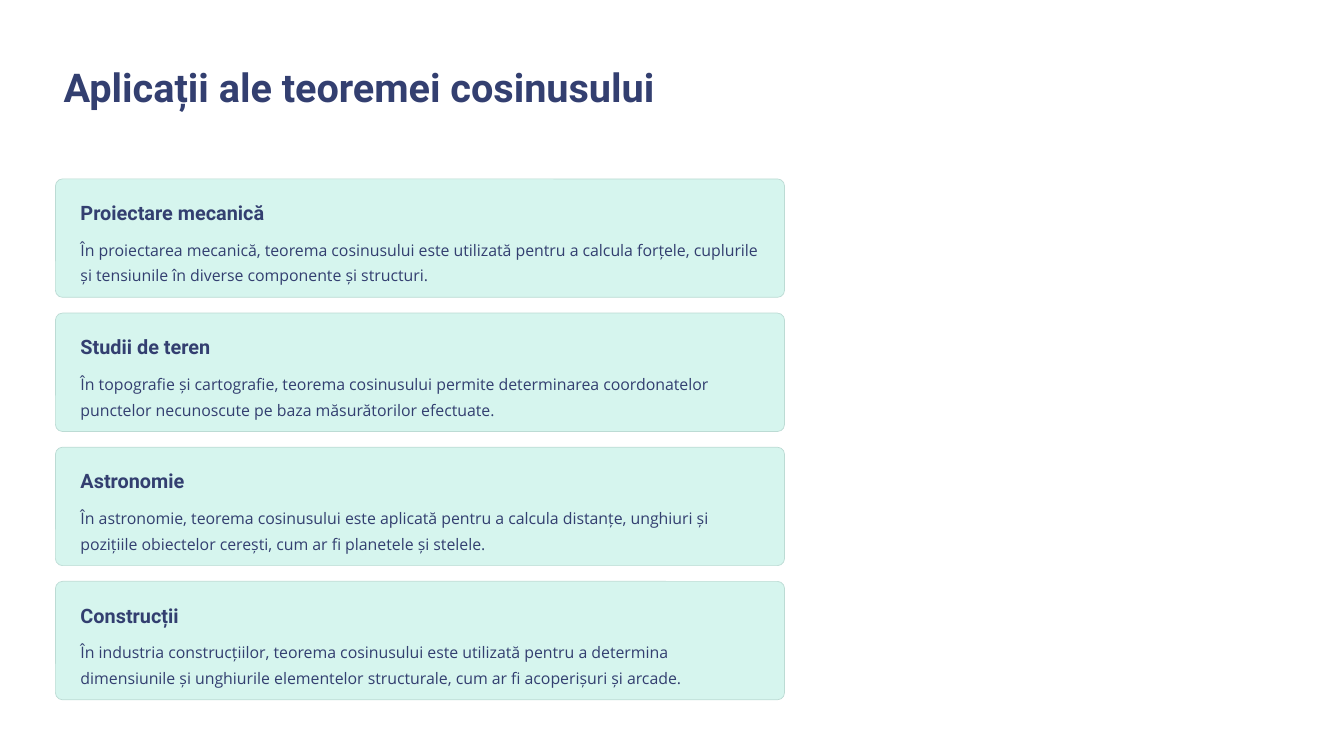
from dataclasses import dataclass

from pptx import Presentation
from pptx.dml.color import RGBColor
from pptx.enum.shapes import MSO_SHAPE
from pptx.util import Inches, Pt


@dataclass(frozen=True)
class Theme:
    background: RGBColor = RGBColor(0xFF, 0xFF, 0xFF)
    ink: RGBColor = RGBColor(0x33, 0x3F, 0x70)
    card: RGBColor = RGBColor(0xD6, 0xF5, 0xEE)
    border: RGBColor = RGBColor(0xBC, 0xDB, 0xD4)
    heading_font: str = "Roboto"
    body_font: str = "Open Sans"
    title_size: float = 34
    heading_size: float = 17
    body_size: float = 13.6


THEME = Theme()

LEFT, WIDTH = 0.66, 8.68
CARD_TOP, CARD_HEIGHT, CARD_PITCH = 2.13, 1.41, 1.597
PADDING = 0.2

APPLICATIONS = [
    ("Proiectare mecanică",
     "În proiectarea mecanică, teorema cosinusului este utilizată pentru a calcula "
     "forțele, cuplurile și tensiunile în diverse componente și structuri."),
    ("Studii de teren",
     "În topografie și cartografie, teorema cosinusului permite determinarea "
     "coordonatelor punctelor necunoscute pe baza măsurătorilor efectuate."),
    ("Astronomie",
     "În astronomie, teorema cosinusului este aplicată pentru a calcula distanțe, "
     "unghiuri și pozițiile obiectelor cerești, cum ar fi planetele și stelele."),
    ("Construcții",
     "În industria construcțiilor, teorema cosinusului este utilizată pentru a "
     "determina dimensiunile și unghiurile elementelor structurale, cum ar fi "
     "acoperișuri și arcade."),
]


def add_text(slide, text, left, top, width, height, *, size, line_spacing,
             font=THEME.heading_font, bold=True, wrap=True):
    box = slide.shapes.add_textbox(Inches(left), Inches(top),
                                   Inches(width), Inches(height))
    box.text_frame.word_wrap = wrap
    paragraph = box.text_frame.paragraphs[0]
    paragraph.line_spacing = Pt(line_spacing)
    run = paragraph.add_run()
    run.text = text
    run.font.name = font
    run.font.size = Pt(size)
    run.font.bold = bold
    run.font.color.rgb = THEME.ink


def add_card(slide, top, heading, description):
    card = slide.shapes.add_shape(MSO_SHAPE.ROUNDED_RECTANGLE, Inches(LEFT),
                                  Inches(top), Inches(WIDTH), Inches(CARD_HEIGHT))
    card.adjustments[0] = 0.06
    card.shadow.inherit = False
    card.fill.solid()
    card.fill.fore_color.rgb = THEME.card
    card.line.color.rgb = THEME.border
    card.line.width = Pt(0.6)

    text_left, text_width = LEFT + PADDING, WIDTH - 2 * PADDING
    add_text(slide, heading, text_left, top + PADDING, 3.1, 0.3,
             size=THEME.heading_size, line_spacing=21.3, wrap=False)
    add_text(slide, description, text_left, top + 0.61, text_width, 0.6,
             size=THEME.body_size, line_spacing=21.8,
             font=THEME.body_font, bold=False)


def main():
    presentation = Presentation()
    presentation.slide_width = Inches(16)
    presentation.slide_height = Inches(9)
    slide = presentation.slides.add_slide(presentation.slide_layouts[6])
    slide.background.fill.solid()
    slide.background.fill.fore_color.rgb = THEME.background

    add_text(slide, "Aplicații ale teoremei cosinusului", LEFT, 0.67, WIDTH, 1.18,
             size=THEME.title_size, line_spacing=42.5)
    for index, (heading, description) in enumerate(APPLICATIONS):
        add_card(slide, CARD_TOP + index * CARD_PITCH, heading, description)

    presentation.save("out.pptx")


if __name__ == "__main__":
    main()
